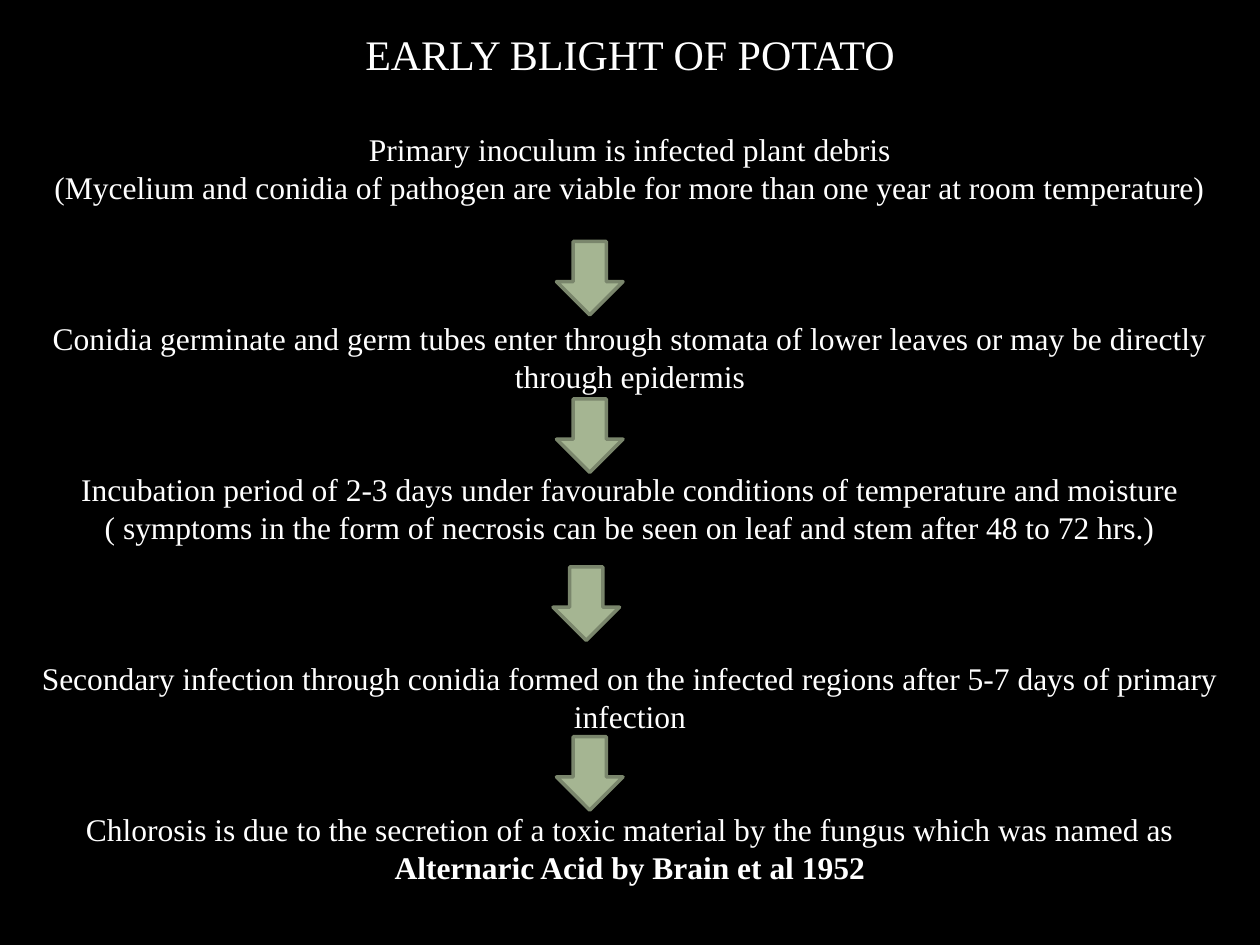
from pptx import Presentation
from pptx.dml.color import RGBColor
from pptx.enum.shapes import MSO_SHAPE
from pptx.enum.text import PP_ALIGN
from pptx.util import Pt

LINE_RATIO = 1.2  # line height relative to font size


def rgb(code):
    return RGBColor.from_string(code)


def add_text(p, text, size=18, bold=False, color="FFFFFF", font="Times New Roman"):
    r = p.add_run()
    r.text = text
    r.font.name = font
    r.font.size = Pt(size)
    r.font.bold = bold
    r.font.color.rgb = rgb(color)
    return r


class SlideBuilder:
    background = "000000"
    arrow_fill = "A5B592"
    arrow_line = "7A866C"

    def __init__(self, prs):
        self.s = prs.slides.add_slide(prs.slide_layouts[6])
        fill = self.s.background.fill
        fill.solid()
        fill.fore_color.rgb = rgb(self.background)

    def text_box(self, left, top, width, height):
        tf = self.s.shapes.add_textbox(Pt(left), Pt(top), Pt(width), Pt(height)).text_frame
        tf.word_wrap = True
        return tf

    def paragraph(self, p, text, size=18, before=0, bold_end=""):
        p.alignment = PP_ALIGN.CENTER
        p.line_spacing = Pt(size * LINE_RATIO)
        p.space_before = Pt(before)
        add_text(p, text, size=size)
        if bold_end:
            add_text(p, bold_end, size=size, bold=True)

    def down_arrow(self, left, top, width=38, height=42):
        sp = self.s.shapes.add_shape(
            MSO_SHAPE.DOWN_ARROW, Pt(left), Pt(top), Pt(width), Pt(height))
        sp.shadow.inherit = False
        sp.fill.solid()
        sp.fill.fore_color.rgb = rgb(self.arrow_fill)
        sp.line.color.rgb = rgb(self.arrow_line)
        sp.line.width = Pt(2)


# Disease cycle: gap before each stage in points, its lines, its bold ending
STAGES = [
    (28.8, ["Primary inoculum is infected plant debris",
            "(Mycelium and conidia of pathogen are viable for more than one year "
            "at room temperature)"], ""),
    (64.8, ["Conidia germinate and germ tubes enter through stomata of lower leaves "
            "or may be directly through epidermis"], ""),
    (43.2, ["Incubation period of 2-3 days under favourable conditions of "
            "temperature and moisture",
            "( symptoms in the form of necrosis can be seen on leaf and stem "
            "after 48 to 72 hrs.)"], ""),
    (64.8, ["Secondary infection through conidia formed on the infected regions "
            "after 5-7 days of primary infection"], ""),
    (43.2, ["Chlorosis is due to the secretion of a toxic material by the fungus "
            "which was named as "], "Alternaric Acid by Brain et al 1952"),
]
# Left and top of each arrow, clear of the text above and below
ARROWS = [(318, 138), (318, 228), (316, 324), (318, 421)]


def main():
    prs = Presentation()
    prs.slide_width, prs.slide_height = Pt(720), Pt(540)
    slide = SlideBuilder(prs)

    # Title and stages
    tf = slide.text_box(12, 13, 696, 510)
    slide.paragraph(tf.paragraphs[0], "EARLY BLIGHT OF POTATO", size=24)
    for gap, lines, bold_end in STAGES:
        for i, line in enumerate(lines):
            slide.paragraph(tf.add_paragraph(), line,
                            before=0 if i else gap, bold_end=bold_end)

    # Arrows between stages
    for left, top in ARROWS:
        slide.down_arrow(left, top)

    prs.save("out.pptx")


if __name__ == "__main__":
    main()
